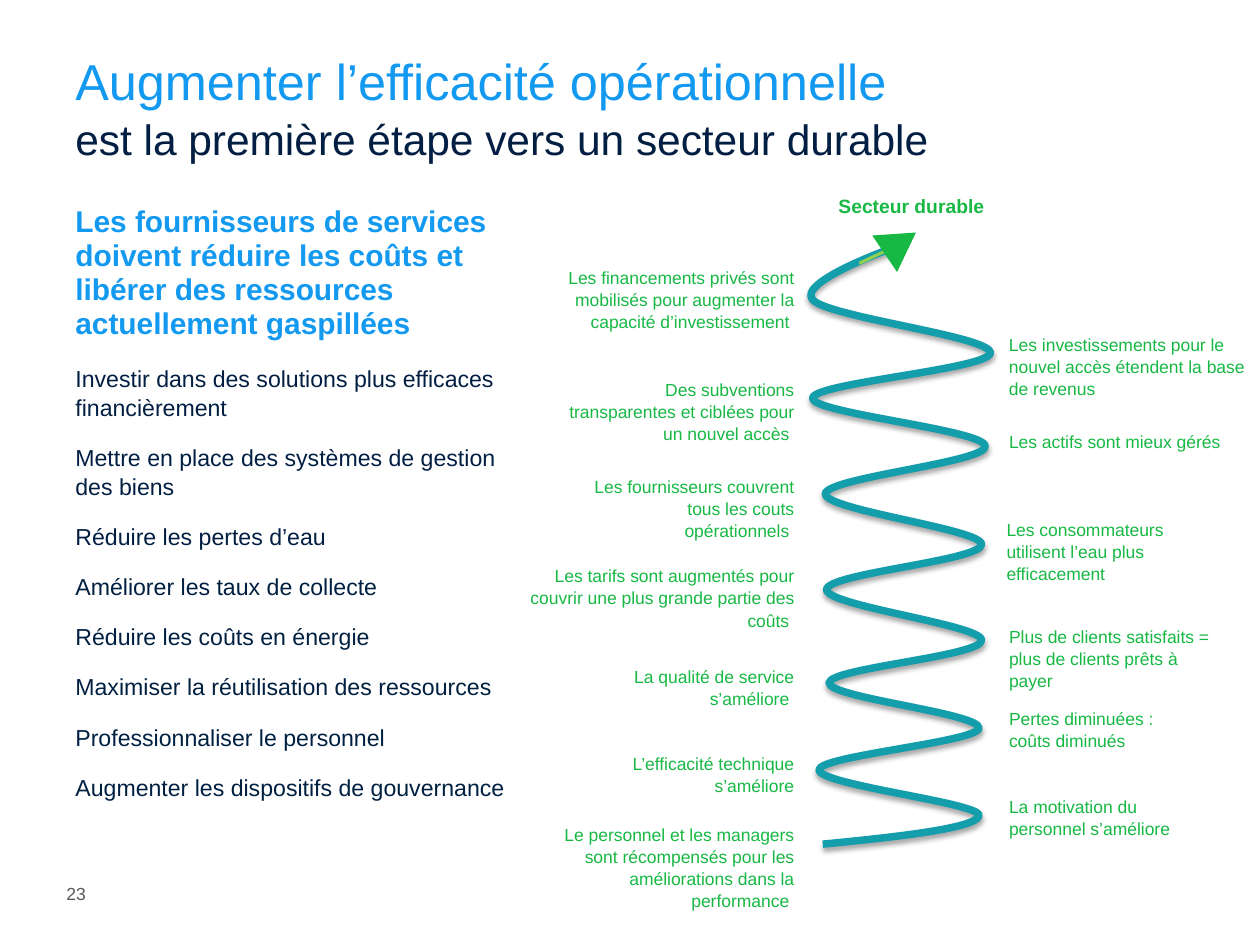
from lxml.etree import SubElement
from pptx import Presentation
from pptx.dml.color import RGBColor
from pptx.enum.shapes import MSO_CONNECTOR, MSO_SHAPE
from pptx.enum.text import MSO_ANCHOR, MSO_AUTO_SIZE, PP_ALIGN
from pptx.oxml import parse_xml
from pptx.oxml.ns import nsdecls, qn
from pptx.util import Inches, Pt

BLUE, NAVY, GREEN, TEAL = "139AF0", "021F43", "18B844", "149DAB"
DARK_NAVY, LIME, GREY = "002041", "92D050", "595959"


def rgb(value):
    return RGBColor.from_string(value)


class SlideBuilder:
    font_name = "Arial"
    line_spacing = 1.05

    def __init__(self, slide):
        self.slide = slide

    def style(self, font, size, color, bold=False):
        font.name = self.font_name
        font.size = Pt(size)
        font.bold = bold
        font.color.rgb = rgb(color)

    def frame(self, left, top, width, height):
        box = self.slide.shapes.add_textbox(
            Inches(left), Inches(top), Inches(width), Inches(height))
        box.text_frame.word_wrap = True
        return box.text_frame

    def title(self, lead, rest):
        frame = self.frame(0.5, 0.3, 9, 0.78)
        frame.margin_top = Inches(0.07)
        paragraph = frame.paragraphs[0]
        paragraph.line_spacing = self.line_spacing
        run = paragraph.add_run()
        run.text = lead
        self.style(run.font, 28.8, BLUE)
        paragraph.add_line_break()
        run = paragraph.add_run()
        run.text = rest
        self.style(run.font, 24.3, NAVY)

    def body(self, heading, actions):
        frame = self.frame(0.5, 1.58, 3.68, 4.99)
        first = frame.paragraphs[0]
        first.text = heading
        first.line_spacing = 0.95
        first.space_after = Pt(6)
        self.style(first.font, 17.1, BLUE, bold=True)
        for text, color in actions:
            paragraph = frame.add_paragraph()
            paragraph.text = text
            paragraph.line_spacing = self.line_spacing
            paragraph.space_before = paragraph.space_after = Pt(6)
            self.style(paragraph.font, 13.2, color)

    def label(self, text, left, top, width, height, align=PP_ALIGN.LEFT,
              size=10, color=GREEN, bold=False, grow=True):
        frame = self.frame(left, top, width, height)
        if grow:
            frame.auto_size = MSO_AUTO_SIZE.SHAPE_TO_FIT_TEXT
        else:
            frame.vertical_anchor = MSO_ANCHOR.MIDDLE
        paragraph = frame.paragraphs[0]
        paragraph.text = text
        paragraph.alignment = align
        paragraph.line_spacing = self.line_spacing
        self.style(paragraph.font, size, color, bold)

    def curve(self, start, segments, color, width):
        anchors = [start] + [segment[-1] for segment in segments]
        builder = self.slide.shapes.build_freeform(*start, scale=Inches(0.01))
        builder.add_line_segments(anchors[1:], close=False)
        shape = builder.convert_to_shape()
        shape.fill.background()
        shape.line.color.rgb = rgb(color)
        shape.line.width = Pt(width)
        min_x = min(x for x, _ in anchors)
        min_y = min(y for _, y in anchors)
        lines = list(shape.element.iter(qn("a:lnTo")))
        for line, segment in zip(lines, segments):
            line.tag = qn("a:cubicBezTo")
            line.remove(line[0])
            for x, y in segment:
                SubElement(line, qn("a:pt"), x=str(x - min_x), y=str(y - min_y))
        shape.element.spPr.append(parse_xml(
            f'<a:effectLst {nsdecls("a")}><a:outerShdw blurRad="{Pt(3.1)}" '
            f'dist="{Pt(1.8)}" dir="5400000" rotWithShape="0">'
            '<a:srgbClr val="000000"><a:alpha val="35000"/></a:srgbClr>'
            '</a:outerShdw></a:effectLst>'))

    def arrow(self, tip, tail, color, width):
        arrow = self.slide.shapes.add_connector(
            MSO_CONNECTOR.STRAIGHT, *(Inches(v) for v in tip + tail))
        arrow.line.color.rgb = rgb(color)
        arrow.line.width = Pt(width)
        SubElement(arrow.line._get_or_add_ln(), qn("a:headEnd"), type="stealth")
        SubElement(arrow._element.spPr, qn("a:effectLst"))

    def triangle(self, left, top, width, height, rotation, color):
        triangle = self.slide.shapes.add_shape(
            MSO_SHAPE.ISOSCELES_TRIANGLE,
            Inches(left), Inches(top), Inches(width), Inches(height))
        triangle.rotation = rotation
        triangle.shadow.inherit = False
        triangle.fill.solid()
        triangle.fill.fore_color.rgb = rgb(color)
        triangle.line.fill.background()


ACTIONS = [
    ("Investir dans des solutions plus efficaces financièrement", NAVY),
    ("Mettre en place des systèmes de gestion des biens", NAVY),
    ("Réduire les pertes d’eau", NAVY),
    ("Améliorer les taux de collecte", DARK_NAVY),
    ("Réduire les coûts en énergie", DARK_NAVY),
    ("Maximiser la réutilisation des ressources", DARK_NAVY),
    ("Professionnaliser le personnel", DARK_NAVY),
    ("Augmenter les dispositifs de gouvernance", DARK_NAVY),
]

LEFT_STEPS = [
    ("Les financements privés sont mobilisés pour augmenter la capacité "
     "d’investissement ", 2.06, 2.15, 0.61),
    ("Des subventions transparentes et ciblées pour un nouvel accès ",
     2.95, 2.09, 0.61),
    ("Les fournisseurs couvrent tous les couts opérationnels ",
     3.72, 1.83, 0.61),
    ("Les tarifs sont augmentés pour couvrir une plus grande partie des coûts ",
     4.43, 2.36, 0.61),
    ("La qualité de service s’améliore ", 5.23, 1.55, 0.44),
    ("L’efficacité technique s’améliore", 5.92, 1.67, 0.44),
    ("Le personnel et les managers sont récompensés pour les améliorations "
     "dans la performance ", 6.48, 2.15, 0.77),
]

RIGHT_STEPS = [
    ("Les investissements pour le nouvel accès étendent la base de revenus",
     7.91, 2.59, 2.13, 0.61),
    ("Les actifs sont mieux gérés", 7.91, 3.36, 1.98, 0.44),
    ("Les consommateurs utilisent l’eau plus efficacement",
     7.89, 4.06, 1.83, 0.61),
    ("Plus de clients satisfaits = plus de clients prêts à payer",
     7.91, 4.91, 1.88, 0.61),
    ("Pertes diminuées : coûts diminués", 7.91, 5.56, 1.61, 0.44),
    ("La motivation du personnel s’améliore", 7.91, 6.26, 1.55, 0.44),
]

SPIRAL_START = (653, 670)
SPIRAL = [
    ((715, 664), (777, 657), (777, 647)),
    ((776, 637), (650, 623), (650, 611)),
    ((650, 600), (775, 589), (777, 578)),
    ((778, 566), (658, 554), (658, 542)),
    ((659, 530), (780, 521), (779, 508)),
    ((779, 496), (656, 481), (656, 468)),
    ((656, 455), (780, 445), (779, 432)),
    ((779, 420), (655, 405), (655, 392)),
    ((656, 379), (784, 367), (782, 354)),
    ((780, 341), (644, 328), (645, 316)),
    ((645, 304), (786, 293), (786, 280)),
    ((786, 267), (658, 252), (645, 238)),
    ((632, 224), (708, 197), (708, 197)),
]
STEPS_RIGHT_EDGE = 6.4


def main():
    presentation = Presentation()
    presentation.slide_width = Inches(10)
    presentation.slide_height = Inches(7.5)
    page = SlideBuilder(
        presentation.slides.add_slide(presentation.slide_layouts[6]))
    page.title("Augmenter l’efficacité opérationnelle ",
               "est la première étape vers un secteur durable")
    page.label("23", 0.25, 6.89, 0.53, 0.4, PP_ALIGN.RIGHT,
               color=GREY, grow=False)
    page.body("Les fournisseurs de services doivent réduire les coûts et "
              "libérer des ressources actuellement gaspillées", ACTIONS)
    for text, top, width, height in LEFT_STEPS:
        page.label(text, STEPS_RIGHT_EDGE - width, top, width, height,
                   PP_ALIGN.RIGHT)
    for step in RIGHT_STEPS:
        page.label(*step)
    page.curve(SPIRAL_START, SPIRAL, TEAL, 4.25)
    page.label("Secteur durable ", 5.83, 1.48, 2.85, 0.29, PP_ALIGN.CENTER,
               size=11, bold=True)
    page.arrow((7.16, 1.93), (6.82, 2.09), LIME, 1.75)
    page.triangle(6.97, 1.78, 0.35, 0.3, 55.8, GREEN)
    presentation.save("out.pptx")


if __name__ == "__main__":
    main()
